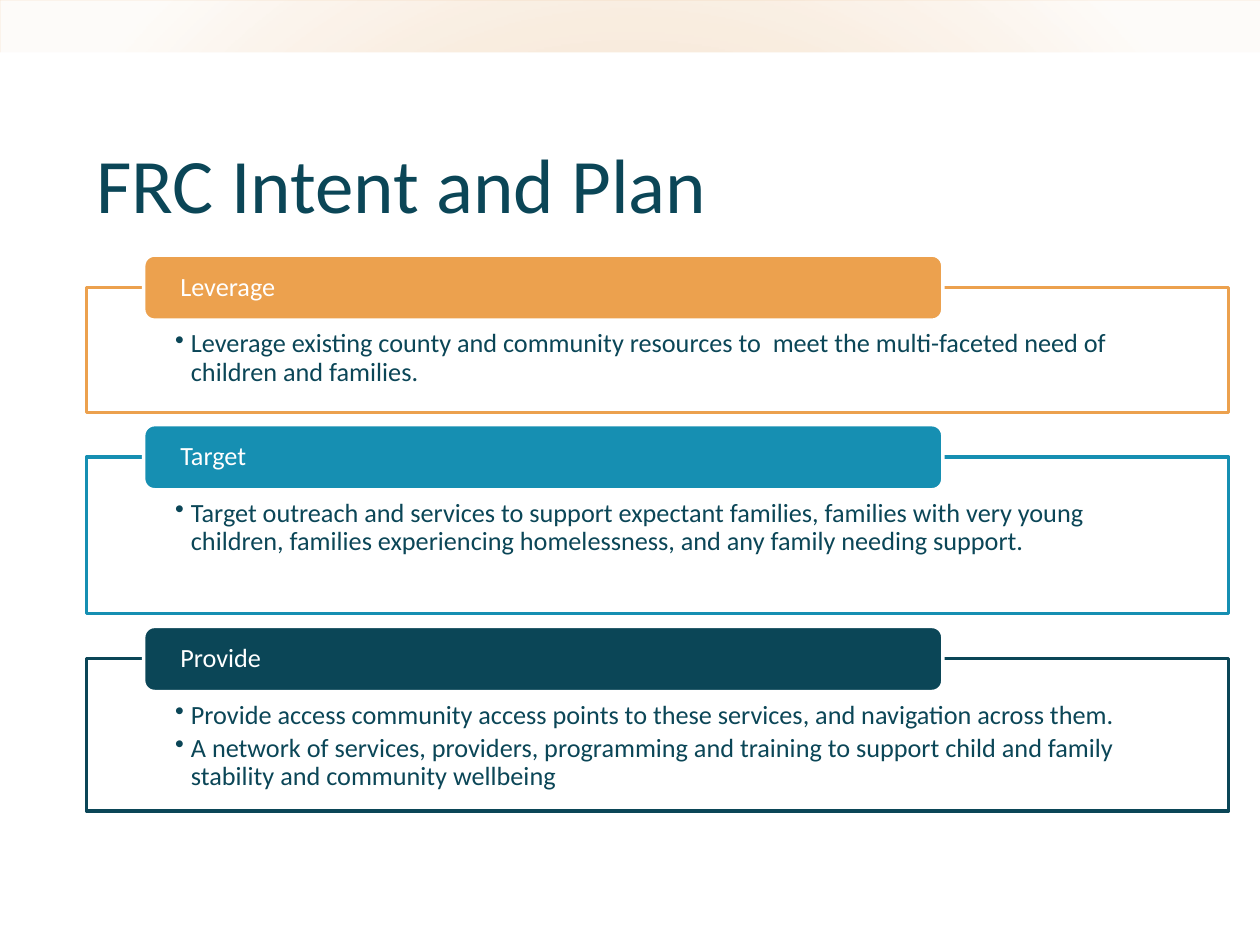
from pptx import Presentation
from pptx.dml.color import RGBColor
from pptx.enum.shapes import MSO_SHAPE
from pptx.enum.text import MSO_ANCHOR, PP_ALIGN
from pptx.oxml import parse_xml
from pptx.oxml.ns import nsdecls, qn
from pptx.util import Pt
from lxml.etree import SubElement


def color(value):
    return RGBColor.from_string(value)


def write(shape, lines, size=15, ink="0B4657", anchor=MSO_ANCHOR.TOP,
          insets=(0, 0, 0, 0), spacing=0.9, after=0, bullet=False):
    frame = shape.text_frame
    frame.word_wrap = True
    frame.vertical_anchor = anchor
    frame.margin_left, frame.margin_top, frame.margin_right, frame.margin_bottom = map(Pt, insets)
    for index, line in enumerate(lines):
        para = frame.paragraphs[0] if index == 0 else frame.add_paragraph()
        para.alignment = PP_ALIGN.LEFT
        para.line_spacing = spacing
        para.space_after = Pt(after)
        if bullet:
            para.level = 1
            properties = para._p.get_or_add_pPr()
            properties.set("marL", str(Pt(9)))
            properties.set("indent", str(Pt(-9)))
            SubElement(properties, qn("a:buChar")).set("char", "•")
        span = para.add_run()
        span.text = line
        span.font.name = "Calibri"
        span.font.size = Pt(size)
        span.font.color.rgb = color(ink)


deck = Presentation()
deck.slide_width, deck.slide_height = Pt(720), Pt(540)
page = deck.slides.add_slide(deck.slide_layouts[6])

band = page.shapes.add_shape(MSO_SHAPE.RECTANGLE, 0, 0, Pt(720), Pt(30))
band.shadow.inherit = False
band.fill.solid()
band.fill.fore_color.rgb = color("D47816")
band.line.fill.background()

veil = page.shapes.add_shape(MSO_SHAPE.RECTANGLE, 0, 0, Pt(720), Pt(540))
veil.shadow.inherit = False
veil.line.fill.background()
veil.fill.background()
empty_fill = veil._element.spPr.find(qn("a:noFill"))
veil._element.spPr.replace(empty_fill, parse_xml(
    f'<a:gradFill {nsdecls("a")} rotWithShape="1"><a:gsLst>'
    '<a:gs pos="10000"><a:srgbClr val="FFFFFF"><a:alpha val="68000"/></a:srgbClr></a:gs>'
    '<a:gs pos="85000"><a:srgbClr val="FFFFFF"><a:alpha val="97000"/></a:srgbClr></a:gs>'
    '</a:gsLst><a:path path="circle">'
    '<a:fillToRect l="50000" t="50000" r="50000" b="50000"/></a:path></a:gradFill>'))

title = page.shapes.add_textbox(Pt(49.5), Pt(28.8), Pt(621), Pt(104.4))
write(title, ["FRC Intent and Plan"], size=44, anchor=MSO_ANCHOR.BOTTOM,
      insets=(5.4, 2.7, 5.4, 2.7), spacing=1)

sections = [
    ("Leverage", "ECA14E", 164.2, 71.4, [
        "Leverage existing county and community resources to  meet the multi-faceted need of "
        "children and families."]),
    ("Target", "168FB2", 261.1, 89.4, [
        "Target outreach and services to support expectant families, families with very young "
        "children, families experiencing homelessness, and any family needing support."]),
    ("Provide", "0B4657", 376.4, 87.1, [
        "Provide access community access points to these services, and navigation across them.",
        "A network of services, providers, programming and training to support child and family "
        "stability and community wellbeing"]),
]
for heading, accent, top, height, points in sections:
    panel = page.shapes.add_shape(MSO_SHAPE.RECTANGLE, Pt(49.5), Pt(top), Pt(652.5), Pt(height))
    label = page.shapes.add_shape(MSO_SHAPE.ROUNDED_RECTANGLE, Pt(82.1), Pt(top - 18.4), Pt(456.7), Pt(37.2))
    for box, fill, line in ((panel, "FFFFFF", accent), (label, accent, "FFFFFF")):
        box.shadow.inherit = False
        box.fill.solid()
        box.fill.fore_color.rgb = color(fill)
        box.line.color.rgb = color(line)
        box.line.width = Pt(2)
    tint = panel._element.spPr.find(qn("a:solidFill"))[0]
    SubElement(tint, qn("a:alpha")).set("val", "90000")
    write(panel, points, insets=(50.6, 24.5, 50.6, 8.6), after=2.7, bullet=True)
    write(label, [heading], ink="FFFFFF", anchor=MSO_ANCHOR.MIDDLE, insets=(19.1, 0, 19.1, 0))

deck.save("out.pptx")
